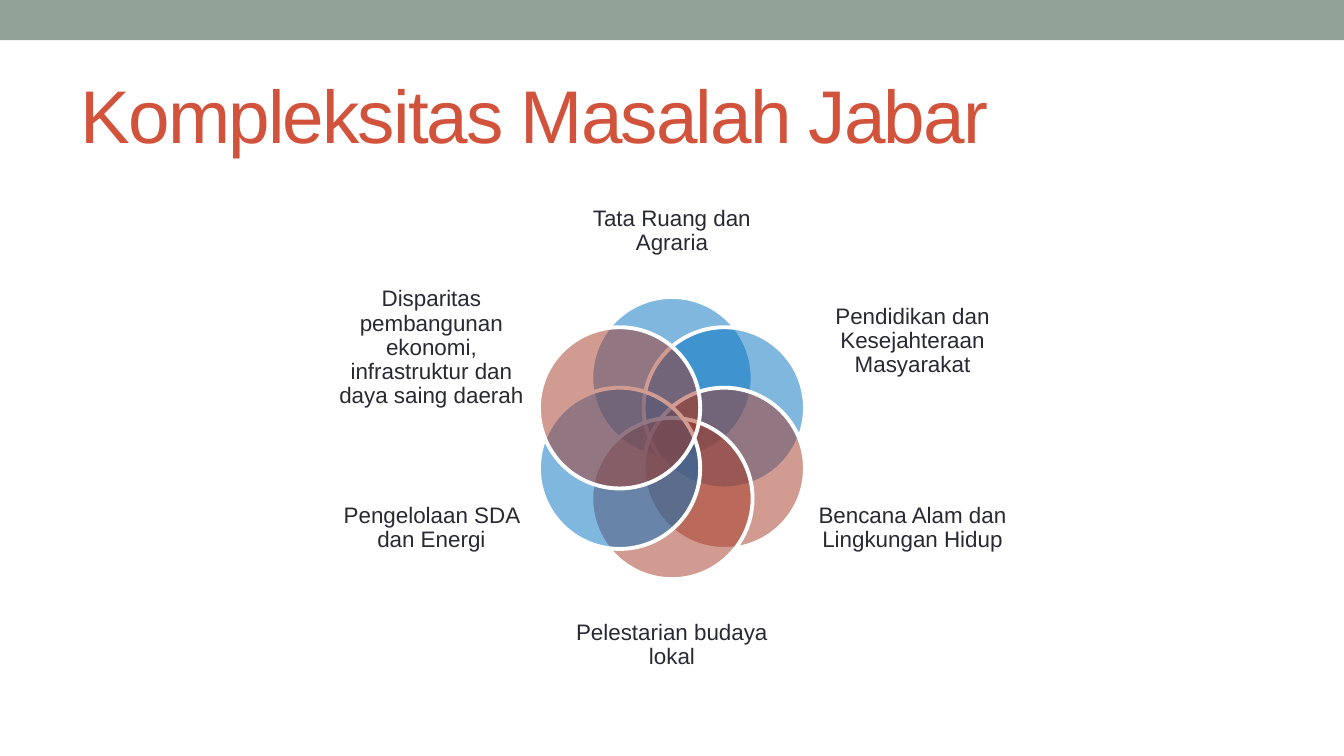
import math

import lxml.etree
import pptx
import pptx.dml.color
import pptx.enum.shapes
import pptx.enum.text
import pptx.oxml.ns
import pptx.util

Inches = pptx.util.Inches
ANCHOR = pptx.enum.text.MSO_ANCHOR
ALIGN = pptx.enum.text.PP_ALIGN
SHAPES = pptx.enum.shapes.MSO_SHAPE

COLORS = {
    "bar": "93A299",
    "title": "D2533C",
    "label": "292934",
    "blue": "0070C0",
    "red": "A53926",
    "outline": "FFFFFF",
}

TITLE = "Kompleksitas Masalah Jabar"
# Clockwise from the top: label, petal colour, label box (left, top, width, height)
PROBLEMS = [
    ("Tata Ruang dan Agraria", "blue", (4.25, 1.31, 1.5, 0.82)),
    ("Pendidikan dan Kesejahteraan Masyarakat", "blue", (6.08, 2.09, 1.42, 0.9)),
    ("Bencana Alam dan Lingkungan Hidup", "red", (6.08, 3.43, 1.42, 1)),
    ("Pelestarian budaya lokal", "red", (4.25, 4.39, 1.5, 0.82)),
    ("Pengelolaan SDA dan Energi", "blue", (2.5, 3.43, 1.42, 1)),
    ("Disparitas pembangunan ekonomi, infrastruktur dan daya saing daerah",
     "red", (2.5, 2.09, 1.42, 1)),
]
SLIDE_WIDTH = 10
SLIDE_HEIGHT = SLIDE_WIDTH * 9 / 16
CENTER_X, CENTER_Y = SLIDE_WIDTH / 2, 3.26
RING_RADIUS = 0.45
PETAL_SIZE = 1.2

LABEL_FRAME = {
    "word_wrap": True, "vertical_anchor": ANCHOR.MIDDLE,
    "margin_left": 0, "margin_right": 0, "margin_top": 0, "margin_bottom": 0,
}
LABEL_PARAGRAPH = {"alignment": ALIGN.CENTER, "line_spacing": 0.9}
TITLE_FRAME = {"word_wrap": True, "vertical_anchor": ANCHOR.MIDDLE}
TITLE_PARAGRAPH = {"alignment": ALIGN.LEFT}


def rgb(name):
    return pptx.dml.color.RGBColor.from_string(COLORS[name])


def apply(target, values):
    for name, value in values.items():
        setattr(target, name, value)


def write(shape, text, size, color, frame_format, paragraph_format):
    frame = shape.text_frame
    apply(frame, frame_format)
    paragraph = frame.paragraphs[0]
    apply(paragraph, paragraph_format)
    run = paragraph.add_run()
    run.text = text
    apply(run.font, {"name": "Arial", "size": pptx.util.Pt(size), "bold": False})
    run.font.color.rgb = rgb(color)
    return run


def add_filled(slide, preset, box, color):
    shape = slide.shapes.add_shape(preset, *map(Inches, box))
    shape.shadow.inherit = False
    shape.fill.solid()
    shape.fill.fore_color.rgb = rgb(color)
    return shape


def add_petal(slide, index, color):
    """Add one half-transparent circle of the ring, clockwise from the top."""
    angle = math.tau * index / len(PROBLEMS)
    left = CENTER_X + RING_RADIUS * math.sin(angle) - PETAL_SIZE / 2
    top = CENTER_Y - RING_RADIUS * math.cos(angle) - PETAL_SIZE / 2
    petal = add_filled(slide, SHAPES.OVAL, (left, top, PETAL_SIZE, PETAL_SIZE), color)
    petal.line.color.rgb = rgb("outline")
    petal.line.width = pptx.util.Pt(2.08)
    fill_color = petal.fill._xPr.find(".//" + pptx.oxml.ns.qn("a:srgbClr"))
    lxml.etree.SubElement(fill_color, pptx.oxml.ns.qn("a:alpha"), val="50000")


def main():
    deck = pptx.Presentation()
    apply(deck, {"slide_width": Inches(SLIDE_WIDTH),
                 "slide_height": Inches(SLIDE_HEIGHT)})
    slide = deck.slides.add_slide(deck.slide_layouts[5])

    bar = add_filled(slide, SHAPES.RECTANGLE, (0, 0, SLIDE_WIDTH, 0.3), "bar")
    bar.line.fill.background()

    title = slide.shapes.title
    apply(title, {"left": Inches(0.5), "top": Inches(0.44),
                  "width": Inches(9), "height": Inches(0.81)})
    heading = write(title, TITLE, 40, "title", TITLE_FRAME, TITLE_PARAGRAPH)
    heading.font._element.set("spc", "-100")

    for index, (problem, color, box) in enumerate(PROBLEMS):
        add_petal(slide, index, color)
        label = slide.shapes.add_textbox(*map(Inches, box))
        write(label, problem, 12, "label", LABEL_FRAME, LABEL_PARAGRAPH)

    deck.save("out.pptx")


if __name__ == "__main__":
    main()
